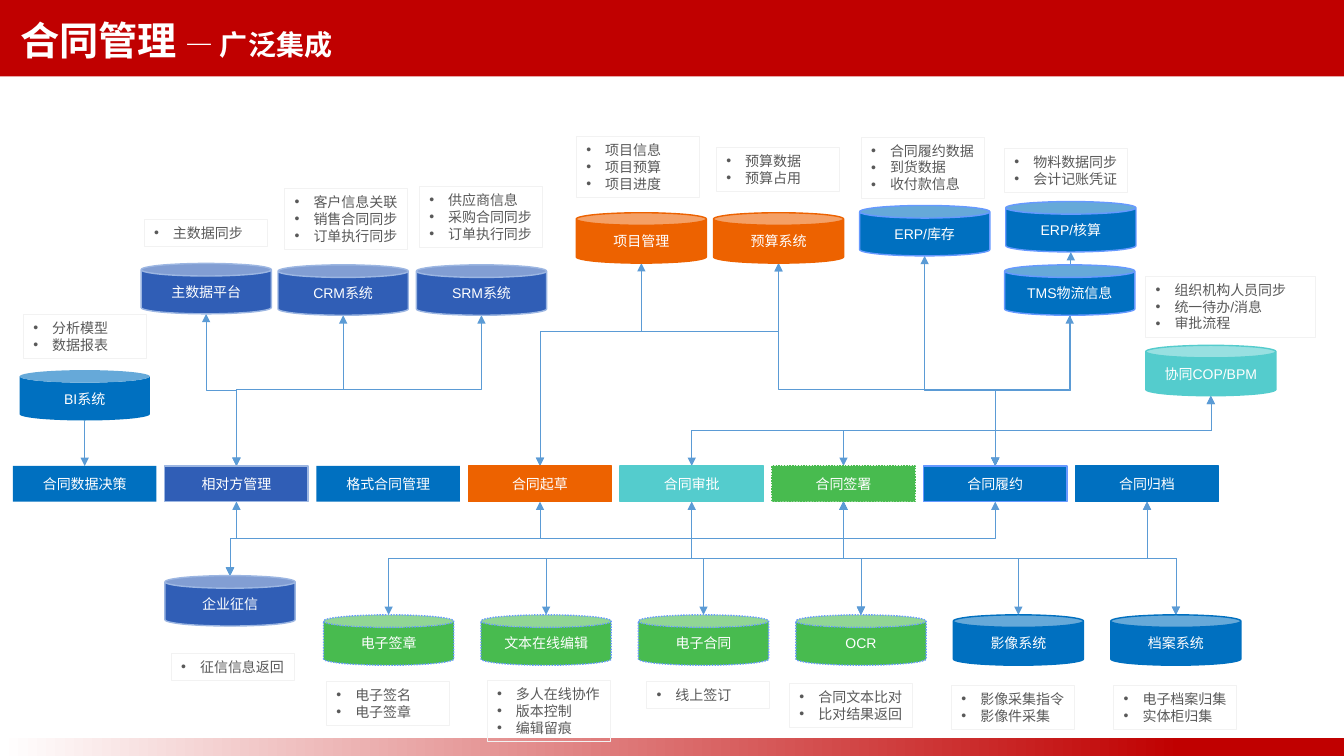
from dataclasses import dataclass

import lxml.etree
import pptx
import pptx.dml.color
import pptx.enum.dml
import pptx.enum.shapes
import pptx.enum.text
import pptx.oxml.ns
import pptx.slide
import pptx.text.text
import pptx.util

Pt = pptx.util.Pt
RGBColor = pptx.dml.color.RGBColor
ShapeKind = pptx.enum.shapes.MSO_SHAPE
Align = pptx.enum.text.PP_ALIGN
Anchor = pptx.enum.text.MSO_ANCHOR
qn = pptx.oxml.ns.qn

WHITE = RGBColor(0xFF, 0xFF, 0xFF)
RED = RGBColor(0xC0, 0x00, 0x00)
BLUE = RGBColor(0x00, 0x70, 0xC0)
NAVY = RGBColor(0x30, 0x5E, 0xB6)
ICE = RGBColor(0x9C, 0xB6, 0xE2)
SKY = RGBColor(0x66, 0x99, 0xFF)
ORANGE = RGBColor(0xED, 0x62, 0x00)
TEAL = RGBColor(0x54, 0xCC, 0xCD)
GREEN = RGBColor(0x48, 0xBB, 0x4F)
WIRE = RGBColor(0x5B, 0x9B, 0xD5)
GRAY = RGBColor(0x59, 0x59, 0x59)
PALE = RGBColor(0xF2, 0xF2, 0xF2)

FONT = "Arial"
PAGE_WIDTH, PAGE_HEIGHT = 960, 540
STAGE_LEFT, STAGE_PITCH, STAGE_TOP = 9.3, 108.4, 332.8
STAGE_WIDTH, STAGE_HEIGHT = 102.4, 25.5
CAN_WIDTH, CAN_HEIGHT = 93, 36
LOWER_LEFT, LOWER_PITCH, LOWER_TOP = 231.1, 112.46, 439.2


@dataclass(frozen=True)
class Style:
    fill: RGBColor
    line: RGBColor | None = None
    dotted: bool = False


@dataclass(frozen=True)
class Node:
    text: str
    style: Style
    left: float
    top: float
    width: float = CAN_WIDTH
    height: float = CAN_HEIGHT
    kind: ShapeKind = ShapeKind.CAN

    @property
    def center(self) -> float:
        return self.left + self.width / 2

    @property
    def bottom(self) -> float:
        return self.top + self.height


@dataclass(frozen=True)
class Note:
    left: float
    top: float
    lines: tuple[str, ...]
    width: float = 88


@dataclass(frozen=True)
class Bus:
    bend: float
    links: tuple[tuple[str, str], ...]
    two_way: bool = True


PLAIN = Style(BLUE)
BLUE_EDGE = Style(BLUE, BLUE)
SUPPLY = Style(BLUE, SKY)
PARTNER = Style(NAVY, ICE)
DRAFT = Style(ORANGE, ORANGE)
APPROVAL = Style(TEAL, TEAL)
SIGNING = Style(GREEN, GREEN, True)
DIGITAL = Style(GREEN, SKY, True)

STAGES = [("合同数据决策", PLAIN), ("相对方管理", PARTNER), ("格式合同管理", PLAIN),
          ("合同起草", DRAFT), ("合同审批", APPROVAL), ("合同签署", SIGNING),
          ("合同履约", SUPPLY), ("合同归档", BLUE_EDGE)]
LOWER_SYSTEMS = [("电子签章", DIGITAL), ("文本在线编辑", DIGITAL), ("电子合同", DIGITAL),
                 ("OCR", DIGITAL), ("影像系统", BLUE_EDGE), ("档案系统", BLUE_EDGE)]
NODES = [
    *(Node(text, style, STAGE_LEFT + STAGE_PITCH * i, STAGE_TOP, STAGE_WIDTH,
           STAGE_HEIGHT, ShapeKind.RECTANGLE) for i, (text, style) in enumerate(STAGES)),
    *(Node(text, style, LOWER_LEFT + LOWER_PITCH * i, LOWER_TOP)
      for i, (text, style) in enumerate(LOWER_SYSTEMS)),
    Node("BI系统", PLAIN, 14, 264.4),
    Node("主数据平台", PARTNER, 100.8, 188.2),
    Node("CRM系统", PARTNER, 198.6, 189.2),
    Node("SRM系统", PARTNER, 297.4, 189.2),
    Node("项目管理", DRAFT, 411.6, 152),
    Node("预算系统", DRAFT, 509.6, 152),
    Node("ERP/库存", SUPPLY, 614, 146.8),
    Node("ERP/核算", SUPPLY, 718.4, 144),
    Node("TMS物流信息", SUPPLY, 717.6, 189.2),
    Node("协同COP/BPM", APPROVAL, 818.4, 246.7),
    Node("企业征信", PARTNER, 117.8, 411.2),
]
BUSES = [
    Bus(326, (("BI系统", "合同数据决策"),), two_way=False),
    Bus(278.5, (("主数据平台", "相对方管理"), ("CRM系统", "相对方管理"),
                ("SRM系统", "相对方管理"), ("预算系统", "合同履约"),
                ("ERP/库存", "合同履约"), ("TMS物流信息", "合同履约"),
                ("ERP/核算", "合同履约"))),
    Bus(236.9, (("项目管理", "合同起草"), ("预算系统", "合同起草"))),
    Bus(307.4, (("协同COP/BPM", "合同审批"), ("协同COP/BPM", "合同签署"))),
    Bus(384.7, tuple((stage, "企业征信")
                     for stage in ("相对方管理", "合同起草", "合同签署", "合同履约"))),
    Bus(398.8, (*(("合同签署", text) for text, _ in LOWER_SYSTEMS),
                ("合同审批", "OCR"), ("合同归档", "OCR"), ("合同归档", "档案系统"))),
]
NOTES = [
    Note(16.7, 224.8, ("分析模型", "数据报表")),
    Note(103, 156.6, ("主数据同步",)),
    Note(203.4, 134.6, ("客户信息关联", "销售合同同步", "订单执行同步")),
    Note(299.6, 133.2, ("供应商信息", "采购合同同步", "订单执行同步")),
    Note(411.7, 97.6, ("项目信息", "项目预算", "项目进度")),
    Note(511.7, 105.5, ("预算数据", "预算占用")),
    Note(615.2, 98, ("合同履约数据", "到货数据", "收付款信息")),
    Note(717.6, 106, ("物料数据同步", "会计记账凭证")),
    Note(818.4, 197.4, ("组织机构人员同步", "统一待办/消息", "审批流程"), 121.5),
    Note(122.4, 466.8, ("征信信息返回",)),
    Note(233.2, 486.8, ("电子签名", "电子签章")),
    Note(348, 486, ("多人在线协作", "版本控制", "编辑留痕")),
    Note(461.9, 486.8, ("线上签订",)),
    Note(564, 488.3, ("合同文本比对", "比对结果返回")),
    Note(679.7, 489.5, ("影像采集指令", "影像件采集")),
    Note(795.6, 489.5, ("电子档案归集", "实体柜归集")),
]


def format_span(span: pptx.text.text._Run, size: float, color: RGBColor, bold: bool = False) -> None:
    span.font.name = FONT
    span.font.size = Pt(size)
    span.font.bold = bold
    span.font.color.rgb = color


def draw_bands(page: pptx.slide.Slide) -> None:
    for top, height in ((0, 54.5), (527, 13)):
        band = page.shapes.add_shape(ShapeKind.RECTANGLE, 0, Pt(top), Pt(PAGE_WIDTH), Pt(height))
        band.shadow.inherit = False
        band.line.fill.background()
        band.fill.solid()
        band.fill.fore_color.rgb = RED
    band.fill.gradient()
    band.fill.gradient_angle = 0
    for stop, position, color in zip(band.fill.gradient_stops, (0, 0.88), (WHITE, RED)):
        stop.position = position
        stop.color.rgb = color


def draw_title(page: pptx.slide.Slide) -> None:
    title = page.shapes.title
    page.shapes.element.append(title.element)
    title.left, title.top, title.width, title.height = Pt(7.2), Pt(4.5), Pt(731.5), Pt(43)
    title.text_frame.vertical_anchor = Anchor.TOP
    title.text_frame.auto_size = pptx.enum.text.MSO_AUTO_SIZE.NONE
    para = title.text_frame.paragraphs[0]
    para.alignment = Align.LEFT
    para.line_spacing = 1.1
    para.space_before = Pt(0)
    for text, size in (("合同管理 ", 28), ("— 广泛集成", 20)):
        span = para.add_run()
        span.text = text
        format_span(span, size, WHITE, bold=True)


def draw_link(page: pptx.slide.Slide, upper: Node, lower: Node, bend: float, two_way: bool) -> None:
    drop = lower.top - upper.bottom
    shift = abs(lower.center - upper.center)
    middle_x = (upper.center + lower.center) / 2
    middle_y = (upper.bottom + lower.top) / 2
    leftward = lower.center <= upper.center
    reach = drop / 2 if leftward else -drop / 2
    link = page.shapes.add_connector(
        pptx.enum.shapes.MSO_CONNECTOR.ELBOW,
        Pt(middle_x - reach), Pt(middle_y - shift / 2),
        Pt(middle_x + reach), Pt(middle_y + shift / 2))
    link.line.color.rgb = WIRE
    link.line.width = Pt(0.5)
    properties = link.element.spPr
    properties.find(qn("a:xfrm")).set("rot", "5400000" if leftward else "16200000")
    guides = properties.find(qn("a:prstGeom")).find(qn("a:avLst"))
    ratio = round((bend - upper.bottom) / drop * 100000)
    lxml.etree.SubElement(guides, qn("a:gd"), name="adj1", fmla=f"val {ratio}")
    line = properties.find(qn("a:ln"))
    for end in ("a:headEnd", "a:tailEnd") if two_way else ("a:tailEnd",):
        lxml.etree.SubElement(line, qn(end), type="triangle")
    lxml.etree.SubElement(properties, qn("a:effectLst"))


def draw_node(page: pptx.slide.Slide, node: Node) -> None:
    box = page.shapes.add_shape(node.kind, Pt(node.left), Pt(node.top), Pt(node.width), Pt(node.height))
    box.shadow.inherit = False
    box.fill.solid()
    box.fill.fore_color.rgb = node.style.fill
    if node.style.line is None:
        box.line.fill.background()
    else:
        box.line.color.rgb = node.style.line
        box.line.width = Pt(1)
    if node.style.dotted:
        box.line.dash_style = pptx.enum.dml.MSO_LINE.ROUND_DOT
    box.text_frame.text = node.text
    box.text_frame.vertical_anchor = Anchor.MIDDLE
    para = box.text_frame.paragraphs[0]
    para.alignment = Align.CENTER
    format_span(para.runs[0], 10, WHITE)


def draw_note(page: pptx.slide.Slide, note: Note) -> None:
    height = 7.2 + 12.2 * len(note.lines)
    box = page.shapes.add_textbox(Pt(note.left), Pt(note.top), Pt(note.width), Pt(height))
    box.line.color.rgb = PALE
    box.line.width = Pt(0.75)
    frame = box.text_frame
    frame.word_wrap = True
    frame.auto_size = pptx.enum.text.MSO_AUTO_SIZE.SHAPE_TO_FIT_TEXT
    frame.text = "\n".join(note.lines)
    for para in frame.paragraphs:
        indent = para._p.get_or_add_pPr()
        indent.set("marL", str(Pt(13.5)))
        indent.set("indent", str(-Pt(13.5)))
        lxml.etree.SubElement(indent, qn("a:buFont"), typeface=FONT)
        lxml.etree.SubElement(indent, qn("a:buChar"), char="•")
        format_span(para.runs[0], 10, GRAY)


def main() -> None:
    deck = pptx.Presentation()
    deck.slide_width, deck.slide_height = Pt(PAGE_WIDTH), Pt(PAGE_HEIGHT)
    page = deck.slides.add_slide(deck.slide_layouts.get_by_name("Title Only"))
    draw_bands(page)
    draw_title(page)
    nodes = {node.text: node for node in NODES}
    for bus in BUSES:
        for upper, lower in bus.links:
            draw_link(page, nodes[upper], nodes[lower], bus.bend, bus.two_way)
    for node in NODES:
        draw_node(page, node)
    for note in NOTES:
        draw_note(page, note)
    deck.save("out.pptx")


if __name__ == "__main__":
    main()
